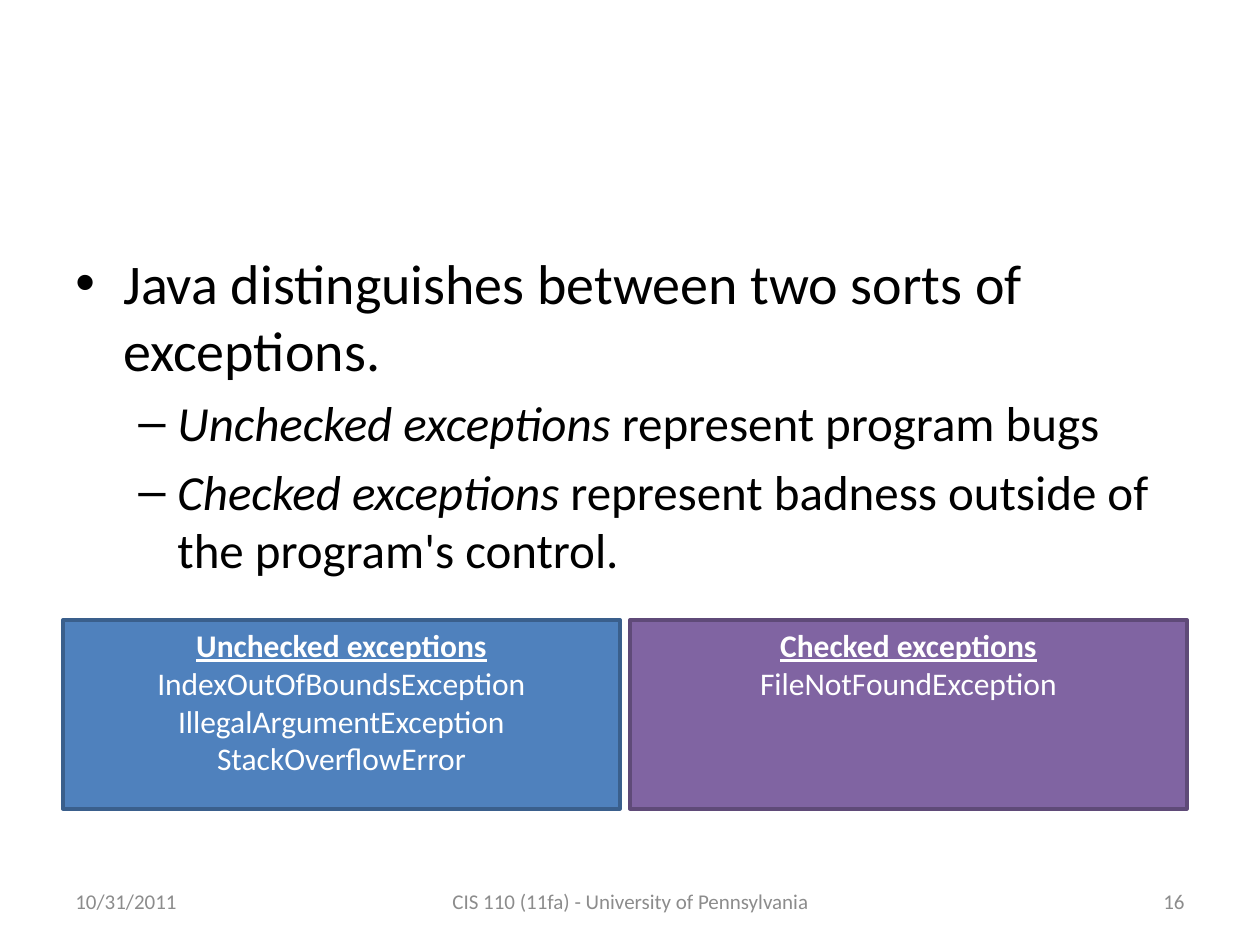
from dataclasses import dataclass

from lxml.etree import SubElement
from pptx import Presentation
from pptx.dml.color import RGBColor
from pptx.enum.shapes import MSO_SHAPE
from pptx.enum.text import MSO_ANCHOR, PP_ALIGN
from pptx.oxml.ns import qn
from pptx.util import Inches, Pt


@dataclass(frozen=True)
class Theme:
    font: str = "Calibri"
    black: str = "000000"
    white: str = "FFFFFF"
    gray: str = "8C8C8C"
    blue: str = "4F81BD"
    blue_edge: str = "3A5F8C"
    purple: str = "8064A2"
    purple_edge: str = "5F4A78"
    body_sizes: tuple = (32, 28)
    card_size: int = 18
    footer_size: int = 12


THEME = Theme()

# Per level: bullet, left margin, hanging indent
BULLETS = (("•", 0.38, 0.38), ("–", 0.81, 0.31))

# Per paragraph: level, then (text, italic) runs
BODY = (
    (0, (("Java distinguishes between two sorts of exceptions.", False),)),
    (1, (("Unchecked exceptions", True),
         (" represent program bugs", False))),
    (1, (("Checked exceptions", True),
         (" represent badness outside of the program's control.", False))),
)

CARDS = (
    (0.5, THEME.blue, THEME.blue_edge, "Unchecked exceptions",
     ("IndexOutOfBoundsException", "IllegalArgumentException", "StackOverflowError")),
    (5, THEME.purple, THEME.purple_edge, "Checked exceptions",
     ("FileNotFoundException",)),
)

FOOTERS = (
    (0.5, 2.33, PP_ALIGN.LEFT, "10/31/2011"),
    (3.42, 3.17, PP_ALIGN.CENTER, "CIS 110 (11fa) - University of Pennsylvania"),
    (7.17, 2.33, PP_ALIGN.RIGHT, "16"),
)


def add_span(para, text, size, color, bold=False, italic=False, underline=False):
    span = para.add_run()
    span.text = text
    font = span.font
    font.name, font.size = THEME.font, Pt(size)
    font.color.rgb = RGBColor.from_string(color)
    font.bold, font.italic, font.underline = bold, italic, underline


def next_para(frame, index):
    return frame.add_paragraph() if index else frame.paragraphs[0]


def add_text_box(page, left, top, width, height):
    box = page.shapes.add_textbox(Inches(left), Inches(top), Inches(width), Inches(height))
    box.text_frame.word_wrap = True
    return box.text_frame


def set_bullet(para, level):
    mark, margin, hanging = BULLETS[level]
    para.level = level
    properties = para._p.get_or_add_pPr()
    properties.set("marL", str(Inches(margin)))
    properties.set("indent", str(-Inches(hanging)))
    SubElement(properties, qn("a:buFont")).set("typeface", "Arial")
    SubElement(properties, qn("a:buChar")).set("char", mark)


def add_body(page):
    frame = add_text_box(page, 0.5, 1.92, 9, 2.83)
    for index, (level, spans) in enumerate(BODY):
        para = next_para(frame, index)
        size = THEME.body_sizes[level]
        para.space_before = Pt(size * 0.2)
        set_bullet(para, level)
        for text, italic in spans:
            add_span(para, text, size, THEME.black, italic=italic)


def add_card(page, left, fill, edge, heading, names):
    card = page.shapes.add_shape(
        MSO_SHAPE.RECTANGLE, Inches(left), Inches(4.92), Inches(4.42), Inches(1.5))
    card.shadow.inherit = False
    card.fill.solid()
    card.fill.fore_color.rgb = RGBColor.from_string(fill)
    card.line.color.rgb = RGBColor.from_string(edge)
    card.line.width = Pt(2)
    frame = card.text_frame
    frame.vertical_anchor = MSO_ANCHOR.TOP
    for index, text in enumerate((heading, *names)):
        para = next_para(frame, index)
        para.alignment = PP_ALIGN.CENTER
        is_heading = index == 0
        add_span(para, text, THEME.card_size, THEME.white,
                 bold=is_heading, underline=is_heading)


def add_footer(page, left, width, alignment, text):
    frame = add_text_box(page, left, 6.95, width, 0.4)
    frame.vertical_anchor = MSO_ANCHOR.MIDDLE
    para = frame.paragraphs[0]
    para.alignment = alignment
    add_span(para, text, THEME.footer_size, THEME.gray)


def main():
    deck = Presentation()
    deck.slide_width, deck.slide_height = Inches(10), Inches(7.5)
    page = deck.slides.add_slide(deck.slide_layouts[6])

    # Bulleted explanation
    add_body(page)

    # Date, course and page number
    for footer in FOOTERS:
        add_footer(page, *footer)

    # Examples of each sort of exception
    for card in CARDS:
        add_card(page, *card)

    deck.save("out.pptx")


if __name__ == "__main__":
    main()
